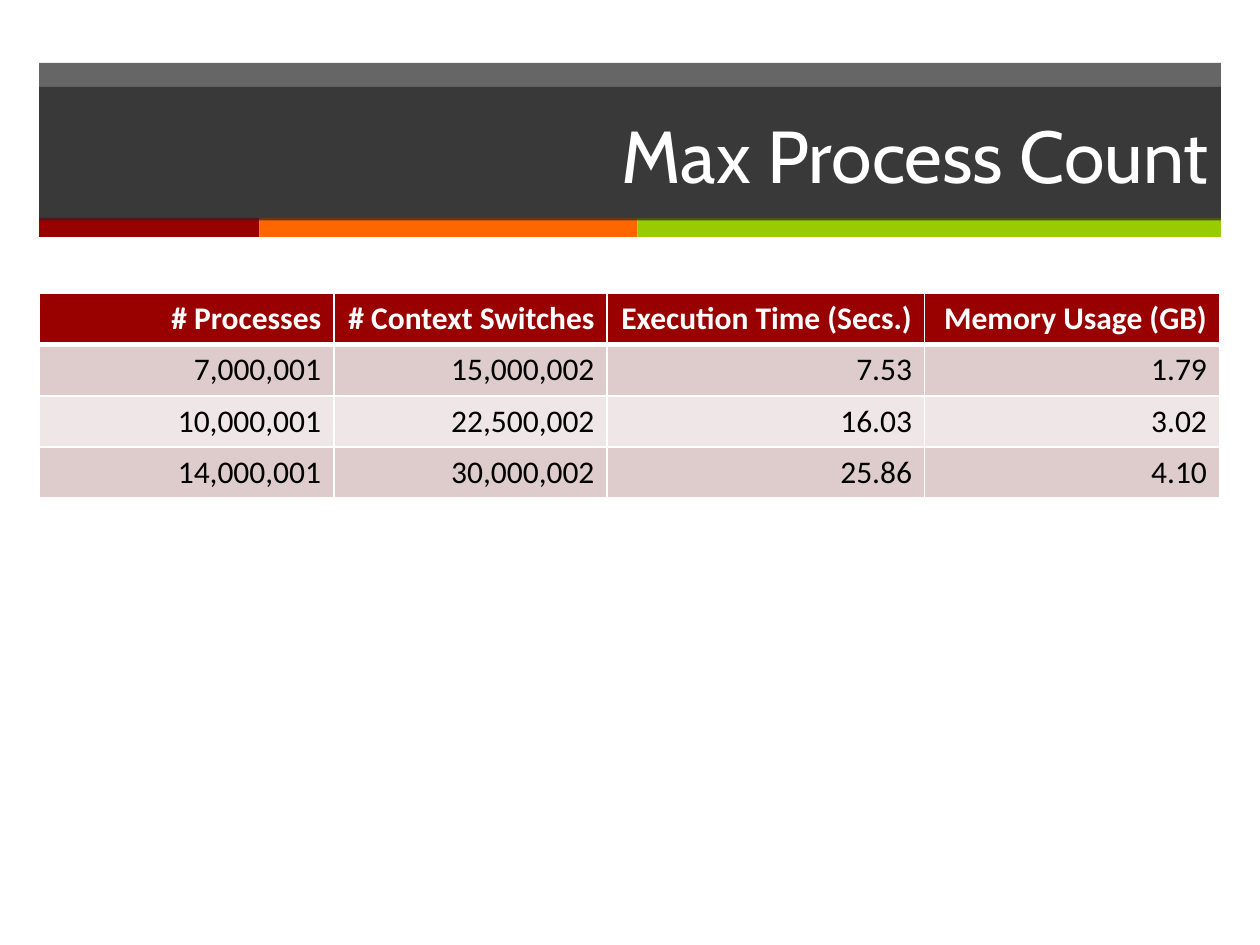
from dataclasses import dataclass

from lxml import etree
from pptx import Presentation
from pptx.dml.color import RGBColor
from pptx.enum import shapes, text
from pptx.oxml import ns
from pptx.util import Inches, Pt


@dataclass(frozen=True)
class Theme:
    dark: str = "262626"
    red: str = "990000"
    orange: str = "FF6600"
    green: str = "99CC00"
    white: str = "FFFFFF"
    black: str = "000000"
    bands: tuple = ("DECCCC", "EFE7E7")
    title_font: str = "Cabin"
    body_font: str = "Calibri"
    title_size: int = 42
    body_size: int = 18


theme = Theme()
LEFT, WIDTH = 0.31, 9.38


def paint(shape, color, opacity=100):
    shape.fill.solid()
    shape.fill.fore_color.rgb = RGBColor.from_string(color)
    shape.line.fill.background()
    if opacity < 100:
        color_node = shape.element.spPr.find(".//" + ns.qn("a:srgbClr"))
        etree.SubElement(color_node, ns.qn("a:alpha"), val=str(opacity * 1000))


def write(frame, words, font, size, color, bold=False):
    """Put one right-aligned run in the frame's first paragraph."""
    para = frame.paragraphs[0]
    para.alignment = text.PP_ALIGN.RIGHT
    span = para.add_run()
    span.text = words
    span.font.name = font
    span.font.size = Pt(size)
    span.font.bold = bold
    span.font.color.rgb = RGBColor.from_string(color)


deck = Presentation()
deck.slide_width, deck.slide_height = Inches(10), Inches(7.5)
page = deck.slides.add_slide(deck.slide_layouts[5])

# Header band and the three-colour strip below it
bars = [
    (LEFT, 0.5, WIDTH, 1.24, theme.dark, 70),
    (LEFT, 1.73, 1.75, 0.15, theme.red, 100),
    (2.06, 1.73, 3, 0.15, theme.orange, 100),
    (5.06, 1.73, 4.63, 0.15, theme.green, 100),
]
for left, top, width, height, color, opacity in bars:
    bar = page.shapes.add_shape(
        shapes.MSO_SHAPE.RECTANGLE,
        Inches(left), Inches(top), Inches(width), Inches(height))
    bar.shadow.inherit = False
    paint(bar, color, opacity)

# Title, brought in front of the bars
title = page.shapes.title
title.element.getparent().append(title.element)
title.left, title.top = Inches(LEFT), Inches(0.69)
title.width, title.height = Inches(WIDTH), Inches(1.06)
paint(title, theme.dark, 70)
title.text_frame.auto_size = text.MSO_AUTO_SIZE.NONE
title.text_frame.vertical_anchor = text.MSO_ANCHOR.MIDDLE
write(title.text_frame, "Max Process Count",
      theme.title_font, theme.title_size, theme.white)

# Results table
results = [
    ("# Processes", "# Context Switches", "Execution Time (Secs.)", "Memory Usage (GB)"),
    ("7,000,001", "15,000,002", "7.53", "1.79"),
    ("10,000,001", "22,500,002", "16.03", "3.02"),
    ("14,000,001", "30,000,002", "25.86", "4.10"),
]
column_widths = (2.34, 2.17, 2.52, 2.34)
row_height = 0.405
table = page.shapes.add_table(
    len(results), len(column_widths), Inches(LEFT), Inches(2.33),
    Inches(WIDTH), Inches(row_height * len(results))).table
for column, width in zip(table.columns, column_widths):
    column.width = Inches(width)

for r, values in enumerate(results):
    header = r == 0
    for c, value in enumerate(values):
        cell = table.cell(r, c)
        write(cell.text_frame, value, theme.body_font, theme.body_size,
              theme.white if header else theme.black, header)
        # Borders come before the fill in the cell properties
        properties = cell._tc.get_or_add_tcPr()
        for side in "LRTB":
            heavy = (r, side) in ((0, "B"), (1, "T"))
            border = etree.SubElement(properties, ns.qn(f"a:ln{side}"),
                                      w=str(Pt(3 if heavy else 1)))
            solid = etree.SubElement(border, ns.qn("a:solidFill"))
            etree.SubElement(solid, ns.qn("a:srgbClr"), val=theme.white)
        cell.fill.solid()
        cell.fill.fore_color.rgb = RGBColor.from_string(
            theme.red if header else theme.bands[(r - 1) % 2])

deck.save("out.pptx")
